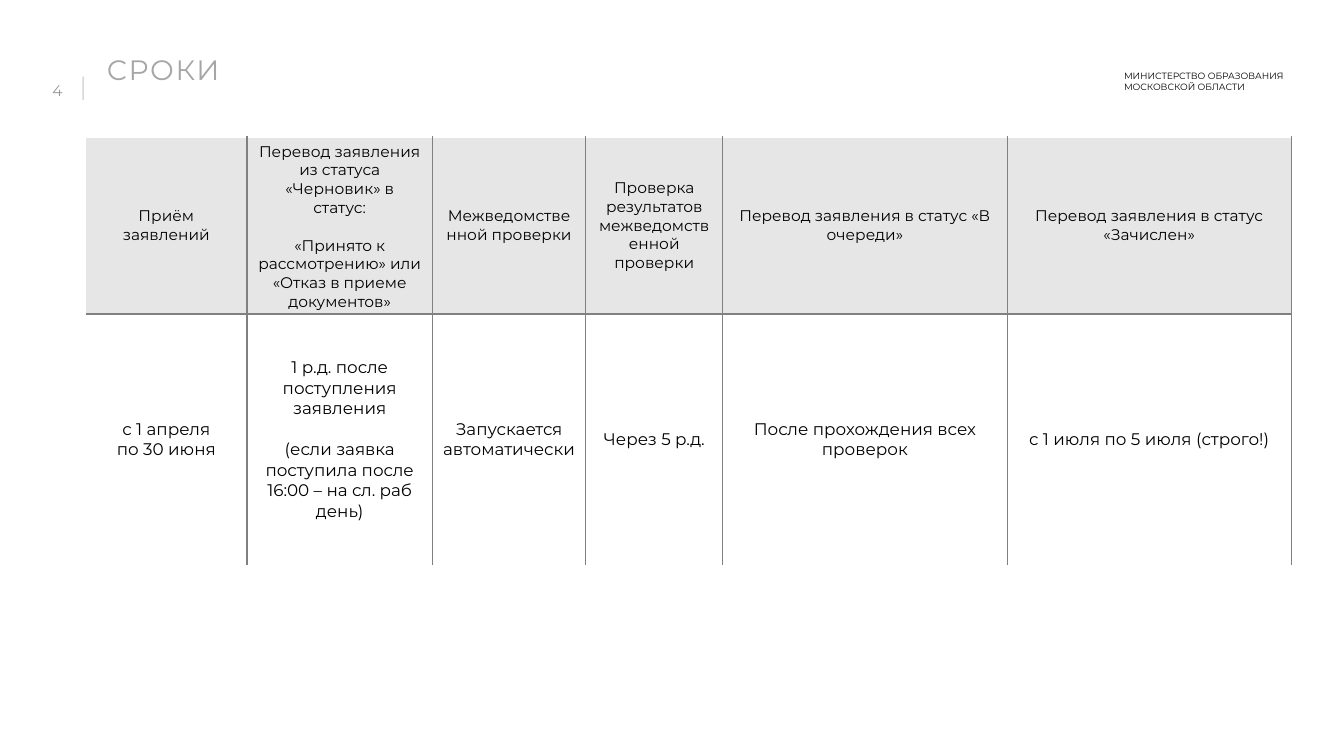
"""Builds the slide with the table of application deadlines."""
from lxml import etree
from pptx import Presentation
from pptx import util as u
from pptx.dml.color import RGBColor
from pptx.enum import text
from pptx.oxml import ns

THEME = {
    "font": "Montserrat",
    "ink": "000000", "title": "A6A6A6", "number": "999999", "bar": "D5D5D5",
    "head_fill": "E7E6E6", "rule": "808080", "top_rule": "FFFFFF",
    "ministry_pt": 6.5, "number_pt": 11, "bar_pt": 14, "title_pt": 20,
    "head_pt": 11, "body_pt": 12, "rule_pt": 1,
}
PAD = (0.1, 0.05, 0.1, 0.05)
LABELS = [
    (["МИНИСТЕРСТВО ОБРАЗОВАНИЯ", "МОСКОВСКОЙ ОБЛАСТИ"],
     (11.05, 0.65, 1.96, 0.32), PAD, "ministry_pt", "ink", "LEFT"),
    (["4"], (0.16, 0.78, 0.46, 0.19), (0, 0.02, 0, 0), "number_pt", "number", "RIGHT"),
    (["│"], (0.67, 0.7, 0.34, 0.34), PAD, "bar_pt", "bar", "LEFT"),
    (["СРОКИ"], (0, 0, 10.52, 1.03), (1.06, 0.71, 0, 0), "title_pt", "title", "LEFT"),
]
LETTER_SPACING = {"title": "120"}

TABLE_AT = (0.85, 1.36)
COLS = [1.6, 1.84, 1.52, 1.36, 2.82, 2.82]
ROWS = [1.57, 2.49]
HEAD = [
    ["Приём заявлений"],
    ["Перевод заявления из статуса «Черновик» в статус:",
     "«Принято к рассмотрению» или «Отказ в приеме документов»"],
    ["Межведомственной проверки"],
    ["Проверка результатов межведомственной проверки"],
    ["Перевод заявления в статус «В очереди»"],
    ["Перевод заявления в статус «Зачислен»"],
]
BODY = [
    ["с 1 апреля", "по 30 июня"],
    ["1 р.д. после поступления заявления",
     "(если заявка поступила после 16:00 – на сл. раб день)"],
    ["Запускается автоматически"],
    ["Через 5 р.д."],
    ["После прохождения всех проверок"],
    ["с 1 июля по 5 июля (строго!)"],
]
SPACED_COL = 1
LINE_HEIGHT = 1.22


def add_run(p, words, size, color):
    r = p.add_run()
    r.text = words
    r.font.name = THEME["font"]
    r.font.size = u.Pt(THEME[size])
    r.font.color.rgb = RGBColor.from_string(THEME[color])
    return r


def add_label(s, lines, at, insets, size, color, align):
    tf = s.shapes.add_textbox(*map(u.Inches, at)).text_frame
    tf.word_wrap = True
    tf.margin_left, tf.margin_top, tf.margin_right, tf.margin_bottom = map(u.Inches, insets)
    p = tf.paragraphs[0]
    p.alignment = text.PP_ALIGN[align]
    for i, line in enumerate(lines):
        if i:
            p.add_line_break()
        r = add_run(p, line, size, color)
        if color in LETTER_SPACING:
            r._r.get_or_add_rPr().set("spc", LETTER_SPACING[color])


def set_borders(cell, colors):
    tcPr = cell._tc.get_or_add_tcPr()
    for i, (side, color) in enumerate(colors.items()):
        ln = etree.Element(ns.qn(f"a:ln{side}"), w=str(u.Pt(THEME["rule_pt"])))
        if color:
            fill = etree.SubElement(ln, ns.qn("a:solidFill"))
            etree.SubElement(fill, ns.qn("a:srgbClr"), val=THEME[color])
        else:
            etree.SubElement(ln, ns.qn("a:noFill"))
        tcPr.insert(i, ln)


def fill_cell(cell, paragraphs, row, col):
    is_head = row == 0
    size = "head_pt" if is_head else "body_pt"
    cell.vertical_anchor = text.MSO_ANCHOR.MIDDLE
    if is_head:
        cell.fill.solid()
        cell.fill.fore_color.rgb = RGBColor.from_string(THEME["head_fill"])
    else:
        cell.fill.background()
    set_borders(cell, {
        "L": "rule" if col else None,
        "R": "rule",
        "T": "top_rule" if is_head else "rule",
        "B": "rule" if is_head else None,
    })
    tf = cell.text_frame
    for i, words in enumerate(paragraphs):
        p = tf.add_paragraph() if i else tf.paragraphs[0]
        p.alignment = text.PP_ALIGN.CENTER
        if i and col == SPACED_COL:
            p.space_before = u.Pt(round(THEME[size] * LINE_HEIGHT, 1))
        add_run(p, words, size, "ink")


def add_deadlines(s):
    size = (sum(COLS), sum(ROWS))
    frame = s.shapes.add_table(len(ROWS), len(COLS), *map(u.Inches, TABLE_AT + size))
    table = frame.table
    table.first_row = table.horz_banding = False
    for col, width in zip(table.columns, COLS):
        col.width = u.Inches(width)
    for i, (height, cells) in enumerate(zip(ROWS, (HEAD, BODY))):
        table.rows[i].height = u.Inches(height)
        for j, paragraphs in enumerate(cells):
            fill_cell(table.cell(i, j), paragraphs, i, j)


def main():
    prs = Presentation()
    prs.slide_width, prs.slide_height = u.Inches(13.33), u.Inches(7.5)
    s = prs.slides.add_slide(prs.slide_layouts[6])
    for label in LABELS:
        add_label(s, *label)
    add_deadlines(s)
    prs.save("out.pptx")


if __name__ == "__main__":
    main()
